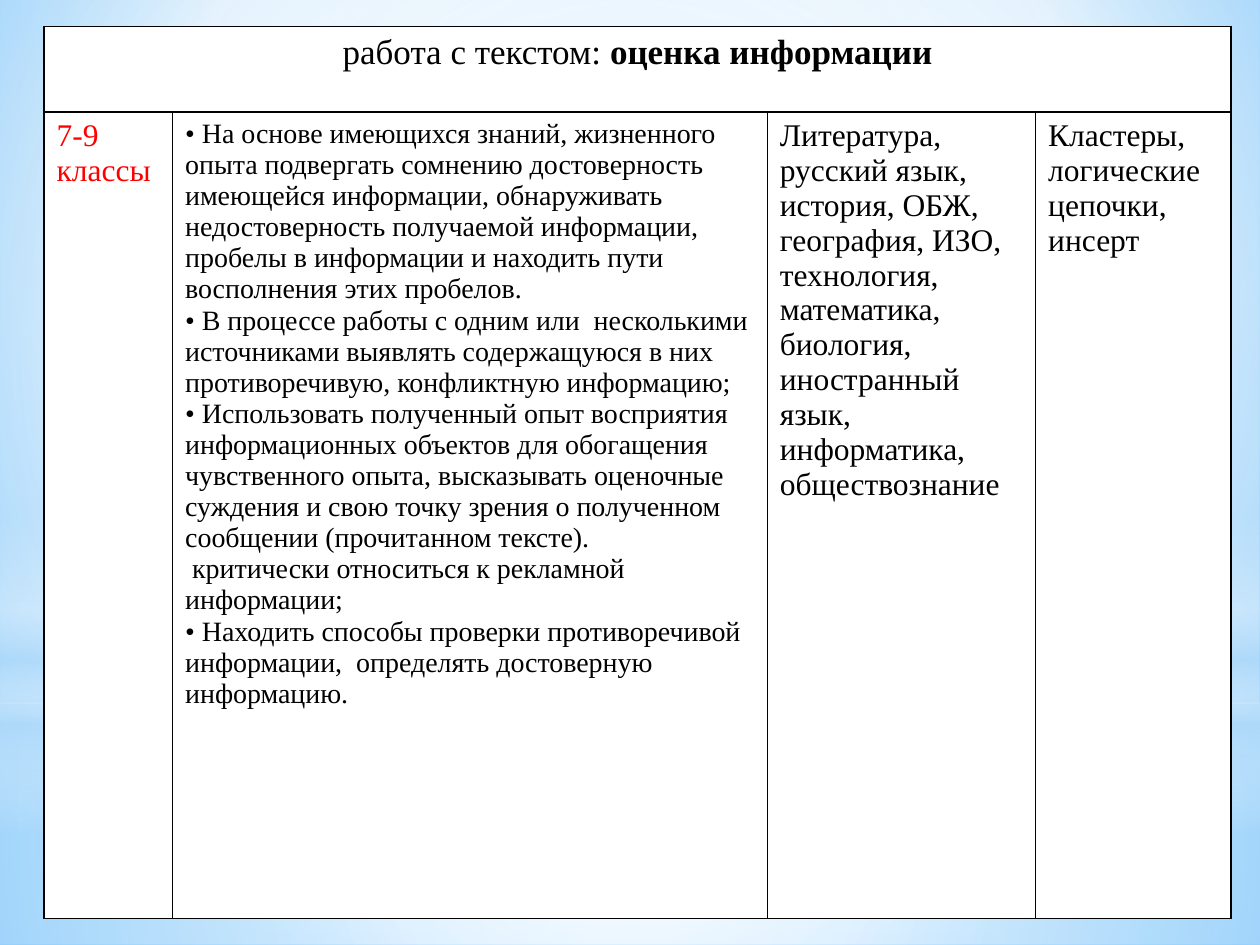
from lxml.etree import SubElement
from pptx import Presentation
from pptx.dml.color import RGBColor
from pptx.enum.shapes import MSO_SHAPE
from pptx.enum.text import PP_ALIGN
from pptx.oxml.ns import qn
from pptx.util import Inches, Pt


def write_text(paragraph, text, size=16, color="000000", bold=False,
               align=PP_ALIGN.LEFT, bullet=None):
    paragraph.alignment = align
    run = paragraph.add_run()
    run.text = text
    run.font.name = "Times New Roman"
    run.font.size = Pt(size)
    run.font.bold = bold
    run.font.color.rgb = RGBColor.from_string(color)
    if bullet:
        properties = paragraph._p.get_or_add_pPr()
        properties.set("marL", "0")
        properties.set("indent", "0")
        SubElement(properties, qn("a:buFont"), typeface="Times New Roman")
        SubElement(properties, qn("a:buChar"), char=bullet)


def fill_gradient(fill, parent, stops, center=None):
    """Stops are (position %, colour, opacity %); no center means top to bottom."""
    fill.solid()
    solid = parent.find(qn("a:solidFill"))
    gradient = parent.makeelement(qn("a:gradFill"), {"rotWithShape": "1"})
    parent.replace(solid, gradient)
    stop_list = SubElement(gradient, qn("a:gsLst"))
    for position, color, opacity in stops:
        stop = SubElement(stop_list, qn("a:gs"), pos=str(position * 1000))
        rgb = SubElement(stop, qn("a:srgbClr"), val=color)
        if opacity < 100:
            SubElement(rgb, qn("a:alpha"), val=str(opacity * 1000))
    if center:
        circle = SubElement(gradient, qn("a:path"), path="circle")
        edges = {side: str(value * 1000) for side, value in zip("ltrb", center)}
        SubElement(circle, qn("a:fillToRect"), edges)
    else:
        SubElement(gradient, qn("a:lin"), ang="5400000", scaled="0")


presentation = Presentation()
presentation.slide_width = Inches(10)
presentation.slide_height = Inches(7.5)
slide = presentation.slides.add_slide(presentation.slide_layouts[6])

# Sky background
sky = slide.background.fill
sky.solid()
fill_gradient(sky, slide.element.find(".//" + qn("p:bgPr")),
              [(0, "9ED5FF", 100), (60, "FFFFFF", 100), (100, "5BB9FF", 100)],
              (20, 10, 20, 60))

# Translucent haze layers: shape, top, height, stops, center
WHITE, BLUE = "FFFFFF", "B4DCFA"
MIDDLE = (50, 50, 50, 50)
haze_layers = [
    (MSO_SHAPE.RECTANGLE, 5.58, 1.92,
     [(0, WHITE, 91), (37, WHITE, 76), (100, BLUE, 79)], MIDDLE),
    (MSO_SHAPE.RECTANGLE, 0, 5.58,
     [(0, WHITE, 89), (48, WHITE, 62), (100, BLUE, 79)], MIDDLE),
    (MSO_SHAPE.RECTANGLE, 4.12, 2.5,
     [(0, WHITE, 0), (29, WHITE, 30), (45, BLUE, 40), (55, WHITE, 26),
      (65, BLUE, 60), (100, WHITE, 0)], None),
    (MSO_SHAPE.OVAL, 1.75, 5.58, [(0, WHITE, 100), (56, WHITE, 0)], MIDDLE),
]
for outline, top, height, stops, center in haze_layers:
    haze = slide.shapes.add_shape(outline, 0, Inches(top), Inches(10), Inches(height))
    haze.shadow.inherit = False
    haze.line.fill.background()
    fill_gradient(haze.fill, haze._element.spPr, stops, center)

# Table grid
column_widths = [1.02, 4.72, 2.13, 1.55]
row_heights = [0.68, 6.4]
table = slide.shapes.add_table(
    len(row_heights), len(column_widths), Inches(0.35), Inches(0.21),
    Inches(sum(column_widths)), Inches(sum(row_heights))).table
for column, width in zip(table.columns, column_widths):
    column.width = Inches(width)
for row, height in zip(table.rows, row_heights):
    row.height = Inches(height)

# White cells with thin black borders
for cell in table.iter_cells():
    properties = cell._tc.get_or_add_tcPr()
    for side in ("lnL", "lnR", "lnT", "lnB"):
        border = SubElement(properties, qn("a:" + side), w=str(Pt(1)))
        border_fill = SubElement(border, qn("a:solidFill"))
        SubElement(border_fill, qn("a:srgbClr"), val="000000")
    cell.fill.solid()
    cell.fill.fore_color.rgb = RGBColor.from_string(WHITE)

# Heading across all columns
table.cell(0, 0).merge(table.cell(0, 3))
heading = table.cell(0, 0).text_frame.paragraphs[0]
write_text(heading, "работа с текстом: ", size=20, align=PP_ALIGN.CENTER)
write_text(heading, "оценка информации", size=20, bold=True, align=PP_ALIGN.CENTER)

# Grades, subjects and techniques
short_cells = [
    (0, "7-9 классы", "FF0000"),
    (2, "Литература, русский язык, история, ОБЖ, география, ИЗО, технология, "
        "математика, биология, иностранный язык, информатика, обществознание", "000000"),
    (3, "Кластеры, логические цепочки, инсерт", "000000"),
]
for column, text, color in short_cells:
    write_text(table.cell(1, column).text_frame.paragraphs[0], text, size=18, color=color)

# Skills
skills = [
    (" На основе имеющихся знаний, жизненного опыта подвергать сомнению "
     "достоверность имеющейся информации, обнаруживать недостоверность "
     "получаемой информации, пробелы в информации и находить пути "
     "восполнения этих пробелов.", "•"),
    (" В процессе работы с одним или  несколькими источниками выявлять "
     "содержащуюся в них противоречивую, конфликтную информацию;", "•"),
    ("• Использовать полученный опыт восприятия информационных объектов для "
     "обогащения чувственного опыта, высказывать оценочные суждения и свою "
     "точку зрения о полученном сообщении (прочитанном тексте).", None),
    (" критически относиться к рекламной информации;", None),
    ("• Находить способы проверки противоречивой информации,  определять "
     "достоверную  информацию.", None),
]
skills_frame = table.cell(1, 1).text_frame
for index, (text, bullet) in enumerate(skills):
    paragraph = skills_frame.add_paragraph() if index else skills_frame.paragraphs[0]
    write_text(paragraph, text, bullet=bullet)

presentation.save("out.pptx")
